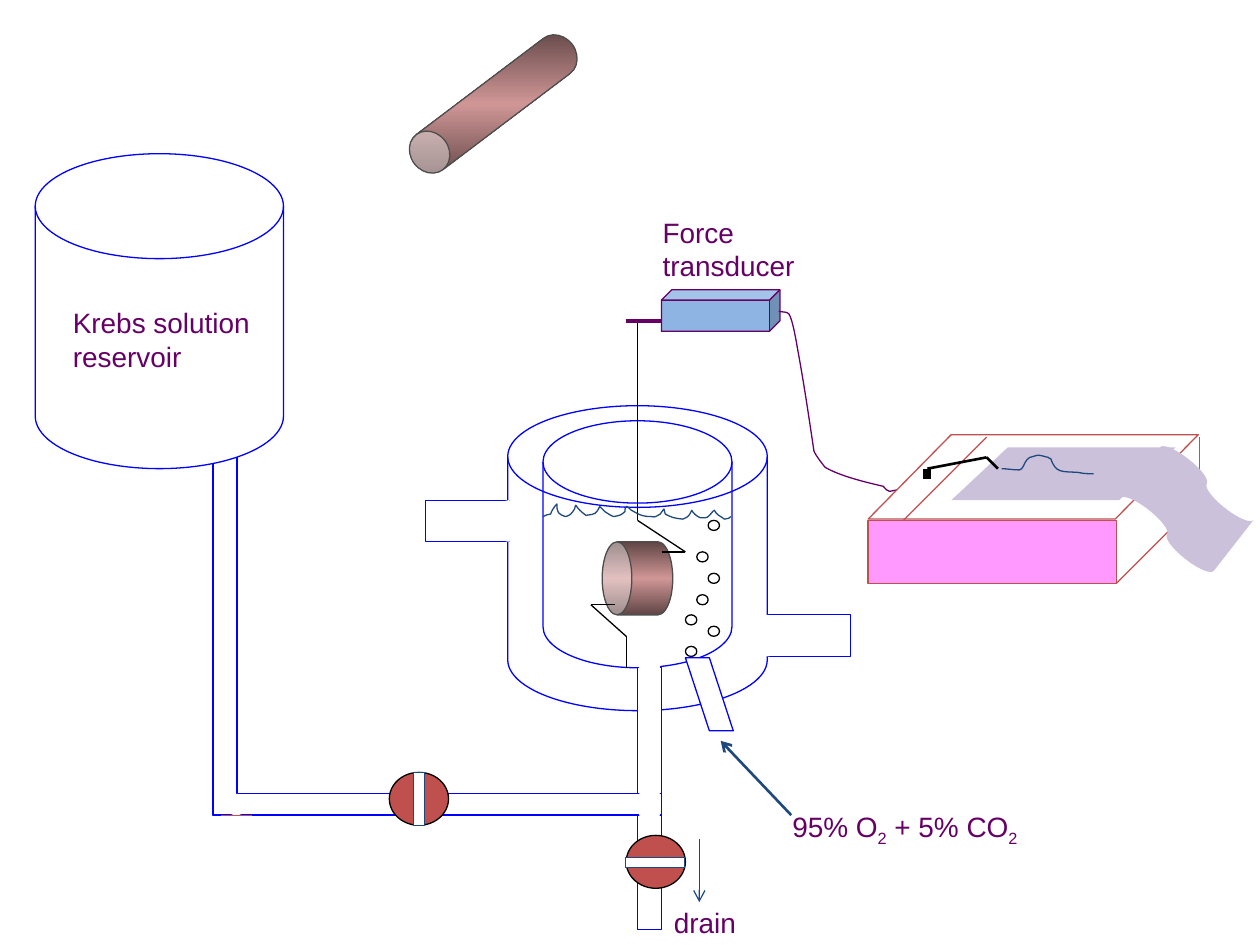
import copy
from dataclasses import dataclass
from typing import Optional

import lxml.etree
import pptx
import pptx.dml.color
import pptx.enum.shapes
import pptx.enum.text
import pptx.oxml.ns
import pptx.util

MSO = pptx.enum.shapes.MSO_SHAPE
qn = pptx.oxml.ns.qn

BLUE, NAVY, PURPLE, RED = "0000FF", "1F497D", "660066", "C0504D"
BLACK, WHITE, GREY, LILAC = "000000", "FFFFFF", "4D4D4D", "CCC1DA"
VESSEL = ("604545", "D09696", "604545")


@dataclass
class Part:
    kind: MSO
    box: tuple[float, float, float, float]
    fill: Optional[str | tuple] = None
    line: Optional[str] = None
    adj: Optional[float] = None
    rot: float = 0
    flip: str = ""


@dataclass
class Line:
    start: tuple[float, float]
    end: tuple[float, float]
    color: str = BLACK
    width: float = 0.75
    arrow: bool = False


@dataclass
class Curve:
    points: list[tuple[float, float]]  # start, then three points per Bezier segment
    color: str = NAVY


@dataclass
class Label:
    box: tuple[float, float, float, float]
    runs: list[str]  # every second run is a subscript


def length(inches: float) -> pptx.util.Length:
    return pptx.util.Cm(inches * 2.54)


def rgb(code: str) -> pptx.dml.color.RGBColor:
    return pptx.dml.color.RGBColor.from_string(code)


def set_line(line, color: str, width: float = 0.75) -> None:
    line.color.rgb = rgb(color)
    line.width = pptx.util.Pt(width)


def set_gradient(sp, colors: tuple) -> None:
    """Three-stop vertical gradient that does not turn with the shape."""
    sp.fill.gradient()
    sp.fill.gradient_angle = 270
    grad = sp.element.spPr.find(qn("a:gradFill"))
    grad.set("rotWithShape", "0")
    stops = grad.find(qn("a:gsLst"))
    middle = copy.deepcopy(stops[0])
    middle.set("pos", "50000")
    stops.insert(1, middle)
    for stop, color in zip(sp.fill.gradient_stops, colors):
        stop.color.rgb = rgb(color)


def draw_part(s, part: Part) -> None:
    sp = s.shapes.add_shape(part.kind, *map(length, part.box))
    sp.shadow.inherit = False
    sp.rotation = part.rot
    if part.adj is not None:
        sp.adjustments[0] = part.adj
    if part.flip:
        sp.element.spPr.find(qn("a:xfrm")).set(part.flip, "1")
    if part.fill is None:
        sp.fill.background()
    elif isinstance(part.fill, tuple):
        set_gradient(sp, part.fill)
    else:
        sp.fill.solid()
        sp.fill.fore_color.rgb = rgb(part.fill)
    if part.line:
        set_line(sp.line, part.line)
    else:
        sp.line.fill.background()


def draw_line(s, line: Line) -> None:
    cn = s.shapes.add_connector(pptx.enum.shapes.MSO_CONNECTOR.STRAIGHT,
                                *map(length, line.start + line.end))
    set_line(cn.line, line.color, line.width)
    spPr = cn.element.spPr
    if line.arrow:
        lxml.etree.SubElement(spPr.find(qn("a:ln")), qn("a:tailEnd"), type="arrow")
    lxml.etree.SubElement(spPr, qn("a:effectLst"))


def draw_curve(s, curve: Curve) -> None:
    pts = [(length(x), length(y)) for x, y in curve.points]
    fb = s.shapes.build_freeform(*pts[0])
    fb.add_line_segments(pts[1:], close=False)
    sp = fb.convert_to_shape()
    bend_segments(sp)
    sp.shadow.inherit = False
    sp.fill.background()
    set_line(sp.line, curve.color)


def bend_segments(sp) -> None:
    """Turn every three straight segments into one cubic Bezier."""
    outline = next(sp.element.iter(qn("a:path")))
    steps = outline.findall(qn("a:lnTo"))
    for i in range(0, len(steps), 3):
        bezier = lxml.etree.SubElement(outline, qn("a:cubicBezTo"))
        for step in steps[i:i + 3]:
            bezier.append(step[0])
            outline.remove(step)


def draw_label(s, label: Label) -> None:
    tf = s.shapes.add_textbox(*map(length, label.box)).text_frame
    tf.word_wrap = True
    tf.auto_size = pptx.enum.text.MSO_AUTO_SIZE.SHAPE_TO_FIT_TEXT
    p = tf.paragraphs[0]
    for i, text in enumerate(label.runs):
        r = p.add_run()
        r.text = text
        r.font.name, r.font.size = "Arial", pptx.util.Pt(16)
        r.font.color.rgb = rgb(PURPLE)
        if i % 2:
            r.font._element.set("baseline", "-25000")


def chain(*points: tuple[float, float]) -> list[Line]:
    return [Line(a, b) for a, b in zip(points, points[1:])]


def joint(x: float, y: float, w: float = 0.19, h: float = 0.33) -> Part:
    """White patch that hides the outlines where two pipes meet."""
    return Part(MSO.OVAL, (x, y, w, h), WHITE)


def valve(x: float, y: float, slot: tuple, rot: float = 0) -> list[Part]:
    return [Part(MSO.OVAL, (x, y, 0.47, 0.42), RED, BLACK),
            Part(MSO.RECTANGLE, slot, WHITE, NAVY, rot=rot)]


DISK = MSO.FLOWCHART_MAGNETIC_DISK
BUBBLES = [(5.44, 5.13), (5.62, 4.97), (5.44, 4.88), (5.53, 4.72),
           (5.62, 4.55), (5.53, 4.38), (5.62, 4.13)]
WAVES = [
    (4.31, 4.1), (4.33, 4.09), (4.35, 4.08), (4.37, 4.08), (4.38, 4.05), (4.4, 4.02), (4.42, 4),
    (4.42, 4.07), (4.43, 4.08), (4.49, 4.1), (4.53, 4.09), (4.54, 4.07), (4.56, 4.04),
    (4.56, 4.03), (4.57, 4.01), (4.57, 4.01), (4.59, 4.04), (4.61, 4.06), (4.65, 4.09),
    (4.73, 4.08), (4.73, 4.08), (4.76, 4.02), (4.76, 4.02), (4.8, 4.06), (4.8, 4.06),
    (4.82, 4.07), (4.84, 4.09), (4.87, 4.1), (4.92, 4.09), (4.93, 4.09), (4.96, 4.06),
    (4.96, 4.05), (4.96, 4.03), (4.97, 4.02), (4.98, 4.01), (5, 4.05), (5.03, 4.06),
    (5.08, 4.09), (5.11, 4.1), (5.17, 4.1), (5.21, 4.11), (5.21, 4.09), (5.24, 4.08),
    (5.26, 4.05), (5.27, 4.04), (5.27, 4.04), (5.28, 4.05), (5.27, 4.07), (5.28, 4.08),
    (5.34, 4.11), (5.34, 4.11), (5.42, 4.12), (5.47, 4.1), (5.47, 4.09), (5.49, 4.05),
    (5.5, 4.07), (5.53, 4.1), (5.56, 4.11), (5.62, 4.11), (5.61, 4.11), (5.64, 4.08),
    (5.65, 4.06), (5.67, 4.05), (5.67, 4.05), (5.69, 4.09), (5.71, 4.09), (5.75, 4.12),
    (5.79, 4.11), (5.78, 4.12), (5.8, 4.1)]
CABLE = [
    (6.18, 2.47), (6.2, 2.48), (6.24, 2.47), (6.26, 2.49), (6.29, 2.53), (6.32, 2.71),
    (6.33, 2.77), (6.38, 3.04), (6.42, 3.31), (6.46, 3.58), (6.47, 3.61), (6.54, 3.7),
    (6.55, 3.71), (6.67, 3.78), (6.88, 3.83), (7.01, 3.86), (7.03, 3.88), (7.04, 3.9),
    (7.06, 3.9), (7.06, 3.9), (7.18, 3.88), (7.2, 3.86), (7.2, 3.85), (7.17, 3.86), (7.16, 3.86)]
TRACE = [
    (7.95, 3.72), (7.99, 3.72), (8.04, 3.73), (8.09, 3.73), (8.12, 3.73), (8.13, 3.67),
    (8.15, 3.65), (8.16, 3.63), (8.18, 3.63), (8.21, 3.62), (8.24, 3.61), (8.23, 3.61),
    (8.28, 3.62), (8.29, 3.62), (8.3, 3.63), (8.32, 3.63), (8.32, 3.64), (8.34, 3.64),
    (8.34, 3.64), (8.38, 3.76), (8.43, 3.74), (8.56, 3.75), (8.6, 3.76), (8.64, 3.76), (8.68, 3.76)]

SCENE = [
    # vessel and organ bath
    Part(MSO.CAN, (3.74, 0.04, 0.35, 1.57), VESSEL, GREY, 0.867, 232.9),
    Part(DISK, (4.03, 3.22, 2.06, 2.42), None, BLUE),
    Part(DISK, (4.31, 3.34, 1.5, 1.96), None, BLUE),
    Part(MSO.CAN, (4.77, 4.31, 0.58, 0.56), VESSEL, GREY, 0.42, 270),
    *chain((4.88, 4.8), (4.69, 4.8), (4.97, 5.05), (4.97, 5.3)),
    Line((5.25, 4.38), (5.44, 4.38)),
    Line((5.06, 4.13), (5.44, 4.38)),
    Line((5.06, 2.55), (5.06, 4.13)),
    Part(MSO.CUBE, (5.25, 2.3, 0.94, 0.33), "8EB4E3", PURPLE, 0.25),
    Line((5.25, 2.55), (4.97, 2.55), PURPLE, 2.25),
    Part(MSO.RECTANGLE, (3.38, 3.97, 0.66, 0.33), None, BLUE),
    Part(MSO.RECTANGLE, (6.09, 4.88, 0.66, 0.33), None, BLUE),
    Part(MSO.PARALLELOGRAM, (5.44, 5.22, 0.38, 0.58), WHITE, BLUE, 0.5, flip="flipH"),
    Part(MSO.RECTANGLE, (5.06, 5.3, 0.19, 2.08), WHITE, BLUE),
    Curve(WAVES),
    *[Part(MSO.OVAL, (x, y, 0.09, 0.08), WHITE, BLACK) for x, y in BUBBLES],
    joint(3.94, 3.97), joint(6, 4.88), joint(5.06, 5.05),
    # pipes, valves and reservoir
    Part(MSO.RECTANGLE, (1.69, 6.3, 3.56, 0.17), WHITE, BLUE),
    Part(MSO.RECTANGLE, (1.69, 3.47, 0.19, 3), WHITE, BLUE),
    joint(5.06, 6.22), joint(1.78, 6.3, h=0.17),
    *valve(3.09, 6.13, (3.28, 6.13, 0.09, 0.42)),
    *valve(4.97, 6.63, (5.16, 6.61, 0.08, 0.47), 270),
    Line((6.28, 6.47), (5.72, 5.88), NAVY, 1.5, True),
    Label((6.19, 6.38, 2.16, 0.37), ["95% O", "2", " + 5% CO", "2"]),
    Part(DISK, (0.28, 1.22, 1.97, 2.5), WHITE, BLUE),
    Line((5.55, 6.66), (5.55, 7.16), NAVY, arrow=True),
    Label((5.25, 7.14, 2.16, 0.37), ["drain"]),
    Label((0.48, 2.38, 2.16, 0.64), ["Krebs solution reservoir"]),
    # chart recorder
    Curve(CABLE, PURPLE),
    Part(MSO.PARALLELOGRAM, (6.89, 3.45, 2.62, 0.67), WHITE, RED, 0.984),
    Part(MSO.RECTANGLE, (6.89, 4.13, 1.97, 0.5), "FF99FF", RED),
    Line((9.52, 3.47), (9.52, 3.97), RED),
    Line((8.86, 4.63), (9.52, 3.97), RED),
    Line((7.17, 4.13), (7.83, 3.47), RED),
    Line((7.36, 3.8), (7.36, 3.72), width=4.5),
    Line((7.36, 3.72), (7.83, 3.63), width=1.5),
    Part(MSO.FLOWCHART_PUNCHED_TAPE, (8.95, 3.72, 0.94, 0.64), LILAC, rot=38, flip="flipV"),
    Part(MSO.PARALLELOGRAM, (7.55, 3.55, 1.78, 0.42), LILAC, adj=1.069),
    Line((7.83, 3.63), (7.92, 3.72), width=1.5),
    Label((5.16, 1.66, 1.78, 0.64), ["Force transducer"]),
    Line((1.75, 6.47), (2, 6.47), RED),
    Line((1.92, 6.3), (2.17, 6.3), BLUE),
    Line((5.25, 6.47), (5.25, 6.22), BLUE),
    Curve(TRACE),
]
DRAW = {Part: draw_part, Line: draw_line, Curve: draw_curve, Label: draw_label}


def main() -> None:
    prs = pptx.Presentation()
    prs.slide_width, prs.slide_height = pptx.util.Cm(25.4), pptx.util.Cm(19.05)
    s = prs.slides.add_slide(prs.slide_layouts[6])
    for item in SCENE:
        DRAW[type(item)](s, item)
    prs.save("out.pptx")


if __name__ == "__main__":
    main()
